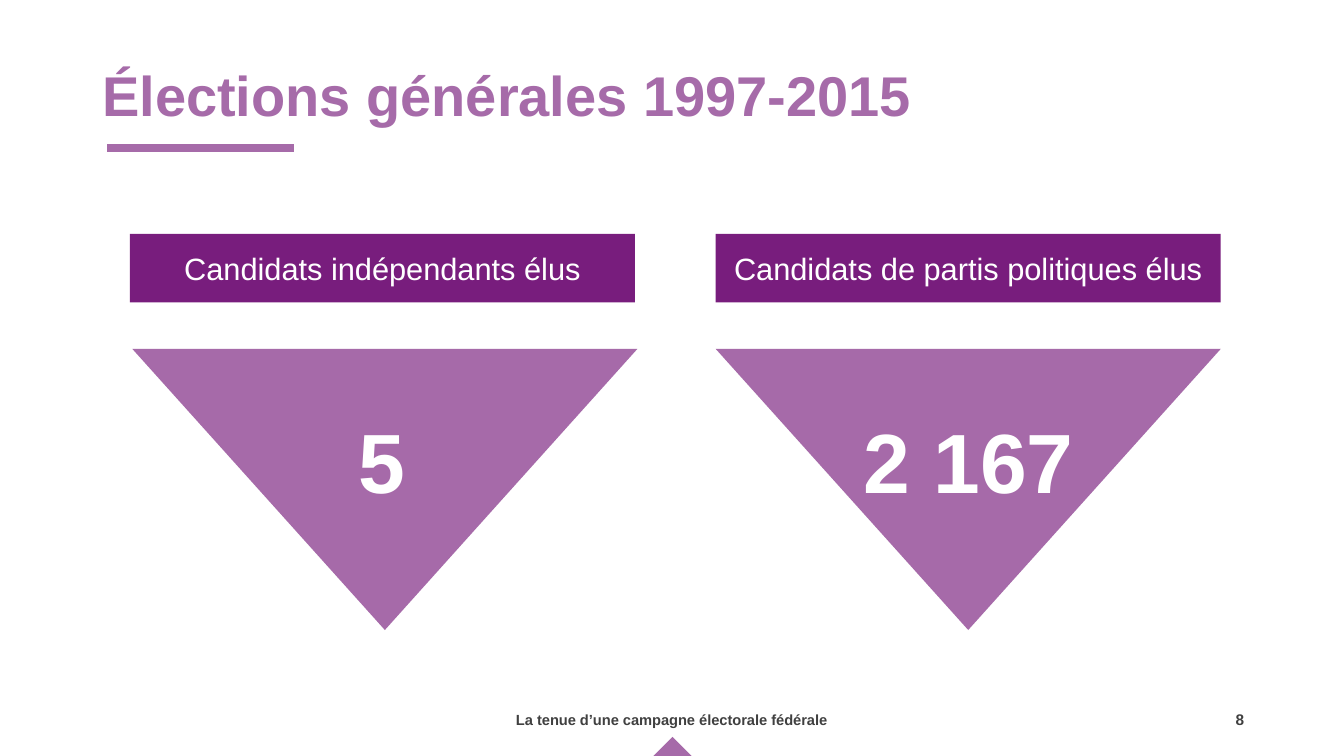
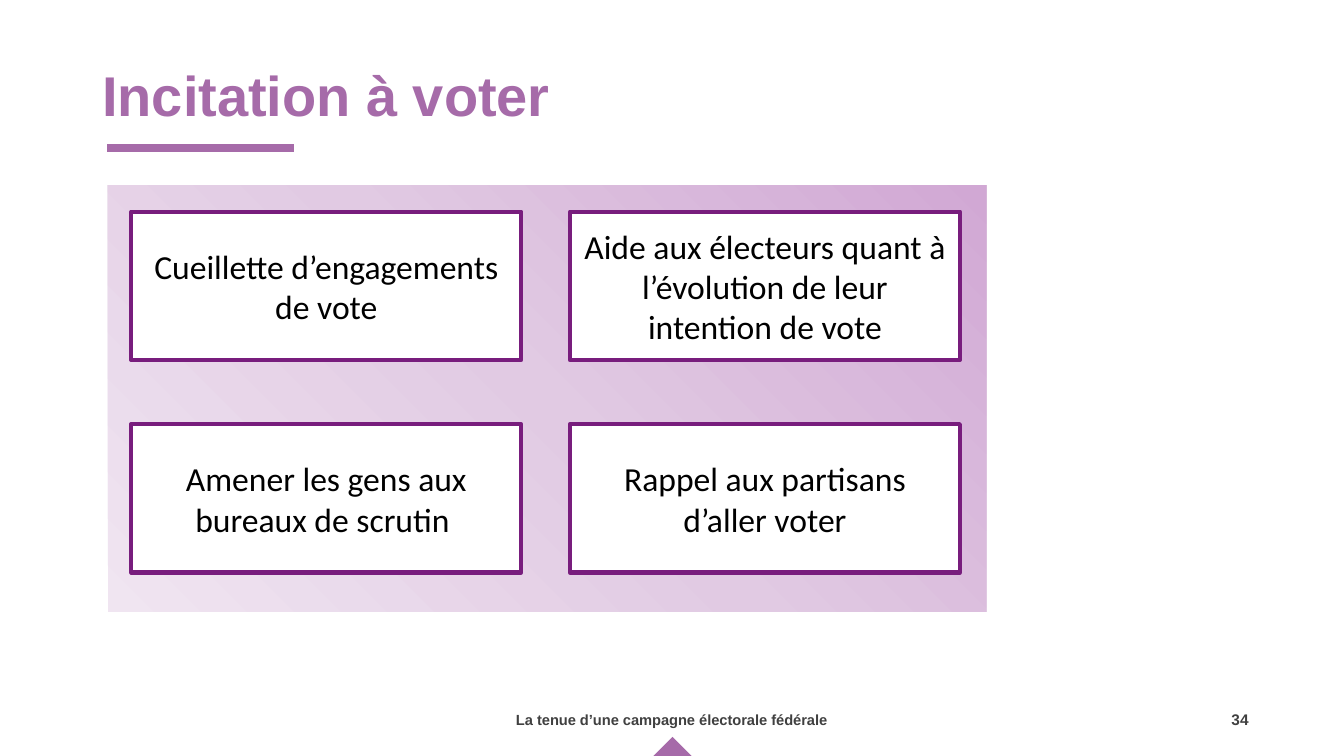
import lxml.etree
import pptx
import pptx.dml.color
import pptx.enum.shapes
import pptx.enum.text
import pptx.oxml
import pptx.oxml.ns
import pptx.util

Pt = pptx.util.Pt
SHAPES = pptx.enum.shapes.MSO_SHAPE
ALIGN = pptx.enum.text.PP_ALIGN
ANCHOR = pptx.enum.text.MSO_ANCHOR
qn = pptx.oxml.ns.qn

PURPLE, LILAC, GREY, WHITE, BLACK = "781D7D", "A66BA9", "404040", "FFFFFF", "000000"
FOOTER = "La tenue d’une campagne électorale fédérale"


def rgb(value):
    return pptx.dml.color.RGBColor.from_string(value)


def add_box(slide, box, text="", size=18, color=WHITE, bold=False, font="Arial",
            align=ALIGN.CENTER, anchor=ANCHOR.MIDDLE, kind=None, fill=None, alpha=None):
    """Add a text box, or a borderless shape when a preset kind is given."""
    left, top, width, height = (Pt(value) for value in box)
    if kind is None:
        shape = slide.shapes.add_textbox(left, top, width, height)
    else:
        shape = slide.shapes.add_shape(kind, left, top, width, height)
        shape.shadow.inherit = False
        shape.line.fill.background()
        if fill:
            shape.fill.solid()
            shape.fill.fore_color.rgb = rgb(fill)
        if alpha:
            srgb = shape.fill._xPr.find(qn("a:solidFill")).find(qn("a:srgbClr"))
            lxml.etree.SubElement(srgb, qn("a:alpha")).set("val", str(alpha * 1000))
    if text:
        frame = shape.text_frame
        frame.word_wrap = True
        frame.vertical_anchor = anchor
        paragraph = frame.paragraphs[0]
        paragraph.text = text
        paragraph.alignment = align
        paragraph.font.name = font
        paragraph.font.size = Pt(size)
        paragraph.font.bold = bold
        paragraph.font.color.rgb = rgb(color)
    return shape


presentation = pptx.Presentation()
presentation.slide_width, presentation.slide_height = Pt(960), Pt(540)

# Frame shared by both slides
slides = []
for title, number in [("Élections générales 1997-2015", "8"), ("Incitation à voter", "34")]:
    slide = presentation.slides.add_slide(presentation.slide_layouts[6])
    slides.append(slide)
    add_box(slide, (853, 504, 65.5, 21), number, 11, GREY, True, anchor=ANCHOR.TOP)
    add_box(slide, (318, 500, 324, 28.5), FOOTER, 10.5, GREY, True)
    add_box(slide, (466, 526.3, 28.8, 14.4), kind=SHAPES.ISOSCELES_TRIANGLE, fill=PURPLE, alpha=66)
    rule = slide.shapes.add_connector(
        pptx.enum.shapes.MSO_CONNECTOR.STRAIGHT, Pt(76.5), Pt(105.8), Pt(210), Pt(105.8))
    rule.line.color.rgb = rgb(LILAC)
    rule.line.width = Pt(6)
    lxml.etree.SubElement(rule._element.spPr, qn("a:effectLst"))
    title_box = add_box(slide, (66, 28.8, 828, 82.8), title, 40, LILAC, True, align=ALIGN.LEFT)
    title_box.text_frame.paragraphs[0].line_spacing = 0.9

elections, voting = slides

# Elected candidates: label above a downward triangle with its count
for label, count, label_left, triangle_left, count_left, count_width in [
    ("Candidats indépendants élus", "5", 92.8, 94.5, 193.5, 158.5),
    ("Candidats de partis politiques élus", "2 167", 511.2, 511.2, 599.5, 184.5),
]:
    triangle = add_box(elections, (triangle_left, 249.2, 360.8, 200.8),
                       kind=SHAPES.ISOSCELES_TRIANGLE, fill=PURPLE, alpha=66)
    triangle.rotation = 180
    add_box(elections, (count_left, 288.7, count_width, 80), count, 60, bold=True, anchor=ANCHOR.TOP)
    add_box(elections, (label_left, 167, 360.8, 49), label, 22, kind=SHAPES.RECTANGLE, fill=PURPLE)

# Ways to get out the vote: two-by-two cards on a gradient panel
panel = add_box(voting, (77, 132.3, 627.5, 304.7), kind=SHAPES.RECTANGLE)
panel.fill.gradient()
gradient = panel._element.spPr.find(qn("a:gradFill"))
stops = "".join(
    f'<a:gs pos="{position * 1000}"><a:srgbClr val="{color}"/></a:gs>'
    for position, color in [(0, "D1A8D4"), (50, "E1CAE3"), (100, "F0E5F1")])
gradient.getparent().replace(gradient, pptx.oxml.parse_xml(
    f'<a:gradFill {pptx.oxml.ns.nsdecls("a")} rotWithShape="1"><a:gsLst>{stops}</a:gsLst>'
    '<a:path path="circle"><a:fillToRect l="100000" b="100000"/></a:path></a:gradFill>'))

cards = [
    "Cueillette d’engagements de vote",
    "Aide aux électeurs quant à l’évolution de leur intention de vote",
    "Amener les gens aux bureaux de scrutin ",
    "Rappel aux partisans d’aller voter",
]
for index, text in enumerate(cards):
    row, column = divmod(index, 2)
    card = add_box(voting, (93.8 + 313.3 * column, 151.2 + 151.8 * row, 278.6, 106), text, 24,
                   BLACK, font="Calibri", kind=SHAPES.RECTANGLE, fill=WHITE)
    card.line.color.rgb = rgb(PURPLE)
    card.line.width = Pt(3)

presentation.save("out.pptx")
